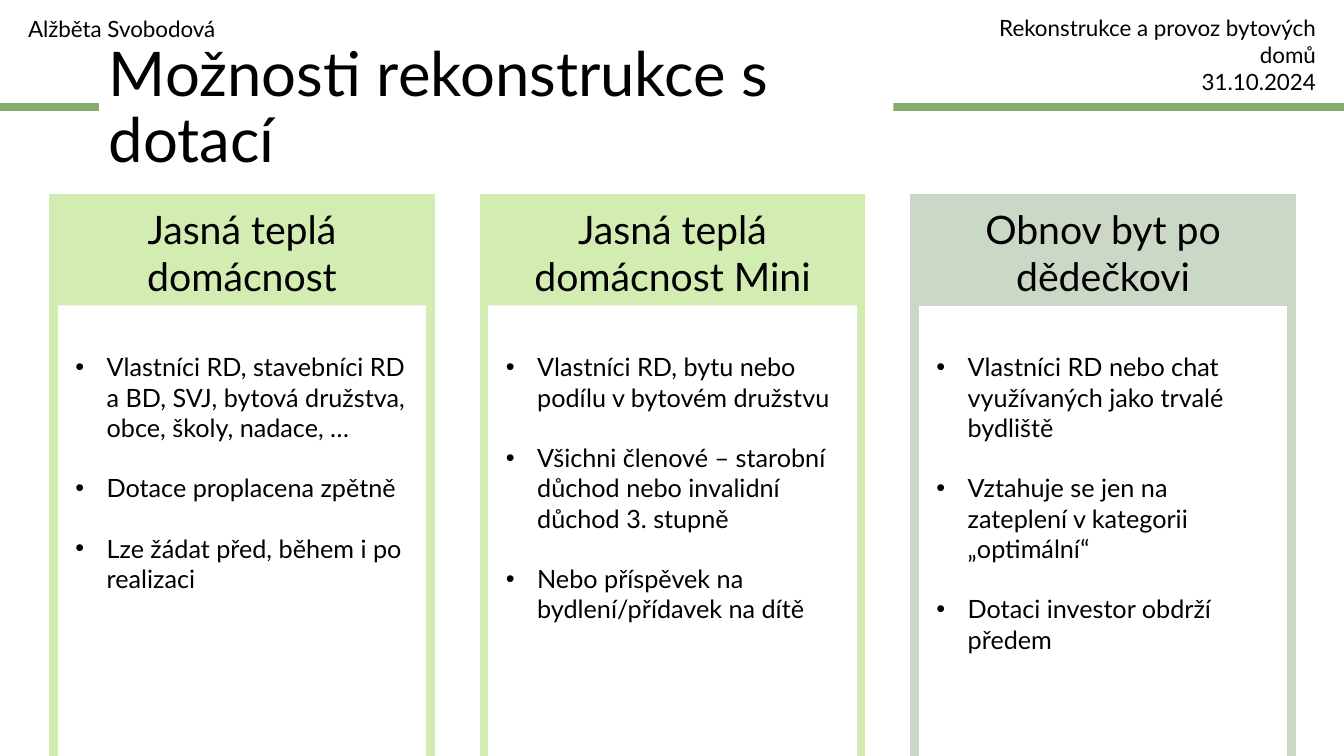
import pptx
import pptx.dml.color
import pptx.enum.shapes
import pptx.enum.text
import pptx.oxml.ns
import pptx.util
from dataclasses import dataclass
from lxml import etree

PX = 9144
ALIGN = pptx.enum.text.PP_ALIGN
ANCHOR = pptx.enum.text.MSO_ANCHOR


@dataclass(frozen=True)
class Theme:
    font: str = "Lato"
    ink: str = "000000"
    paper: str = "FFFFFF"
    rule: str = "85AA6A"
    lime: str = "D3ECB2"
    sage: str = "CCD8C6"
    title: int = 44
    head: int = 28
    body: int = 18
    note: int = 16
    thick: int = 6
    thin: float = 0.75
    gap: float = 21.6


THEME = Theme()

CARDS = [
    ("Jasná teplá domácnost", THEME.lime, 0, [
        "Vlastníci RD, stavebníci RD a BD, SVJ, bytová družstva, obce, školy, nadace, …",
        "Dotace proplacena zpětně",
        "Lze žádat před, během i po realizaci",
    ]),
    ("Jasná teplá domácnost Mini", THEME.lime, 0, [
        "Vlastníci RD, bytu nebo podílu v bytovém družstvu",
        "Všichni členové – starobní důchod nebo invalidní důchod 3. stupně",
        "Nebo příspěvek na bydlení/přídavek na dítě",
    ]),
    ("Obnov byt po dědečkovi", THEME.sage, THEME.thin, [
        "Vlastníci RD nebo chat využívaných jako trvalé bydliště",
        "Vztahuje se jen na zateplení v kategorii „optimální“",
        "Dotaci investor obdrží předem",
    ]),
]


def px(*sizes):
    return [pptx.util.Emu(size * PX) for size in sizes]


def tint(code):
    return pptx.dml.color.RGBColor.from_string(code)


def write(shape, lines, size, align=ALIGN.LEFT, anchor=ANCHOR.TOP):
    frame = shape.text_frame
    frame.word_wrap = True
    frame.vertical_anchor = anchor
    paras = []
    for i, line in enumerate(lines):
        para = frame.add_paragraph() if i else frame.paragraphs[0]
        para.alignment = align
        run = para.add_run()
        run.text = line
        run.font.name = THEME.font
        run.font.size = pptx.util.Pt(size)
        run.font.color.rgb = tint(THEME.ink)
        paras.append(para)
    return paras


def add_box(slide, area, fill=None, edge=None, width=0):
    kind = pptx.enum.shapes.MSO_SHAPE.RECTANGLE
    box = slide.shapes.add_shape(kind, *px(*area))
    box.shadow.inherit = False
    if fill:
        box.fill.solid()
        box.fill.fore_color.rgb = tint(fill)
    else:
        box.fill.background()
    if width:
        box.line.color.rgb = tint(edge)
        box.line.width = pptx.util.Pt(width)
        line = box._element.spPr.find(pptx.oxml.ns.qn("a:ln"))
        join = etree.SubElement(line, pptx.oxml.ns.qn("a:miter"))
        join.set("lim", "800000")
    else:
        box.line.fill.background()
    return box


def add_text(slide, area, lines, size, align=ALIGN.LEFT):
    return write(slide.shapes.add_textbox(*px(*area)), lines, size, align)


def add_list(slide, area, lines):
    for i, para in enumerate(add_text(slide, area, lines, THEME.body)):
        if i:
            para.space_before = pptx.util.Pt(THEME.gap)
        props = para._p.get_or_add_pPr()
        props.set("marL", str(31 * PX))
        props.set("indent", str(-31 * PX))
        font = etree.SubElement(props, pptx.oxml.ns.qn("a:buFont"))
        font.set("typeface", "Arial")
        mark = etree.SubElement(props, pptx.oxml.ns.qn("a:buChar"))
        mark.set("char", "•")


def add_rule(slide, top):
    kind = pptx.enum.shapes.MSO_CONNECTOR.STRAIGHT
    rule = slide.shapes.add_connector(kind, *px(0, top, 1333, top))
    rule.line.color.rgb = tint(THEME.rule)
    rule.line.width = pptx.util.Pt(THEME.thick)
    etree.SubElement(rule._element.spPr, pptx.oxml.ns.qn("a:effectLst"))


def add_card(slide, left, title, color, width, lines):
    head = add_box(slide, (left, 199, 374, 104), color, color, width)
    write(head, [title], THEME.head, ALIGN.CENTER)
    add_box(slide, (left, 197, 374, 586), None, color, THEME.thick)
    add_list(slide, (left + 12, 344, 350, 313), lines)


def main():
    deck = pptx.Presentation()
    deck.slide_width, deck.slide_height = px(1333, 750)
    slide = deck.slides.add_slide(deck.slide_layouts[6])
    add_rule(slide, 106)
    title = add_box(slide, (98, 36, 788, 145), THEME.paper)
    para, = write(title, ["Možnosti rekonstrukce s dotací"], THEME.title, anchor=ANCHOR.MIDDLE)
    para.line_spacing = 0.9
    for i, card in enumerate(CARDS):
        add_card(slide, 53 + 427 * i, *card)
    event = ["Rekonstrukce a provoz bytových domů", "31.10.2024"]
    add_text(slide, (923, 9, 392, 64), event, THEME.note, ALIGN.RIGHT)
    add_text(slide, (18, 10, 392, 37), ["Alžběta Svobodová"], THEME.note)
    deck.save("out.pptx")


if __name__ == "__main__":
    main()
